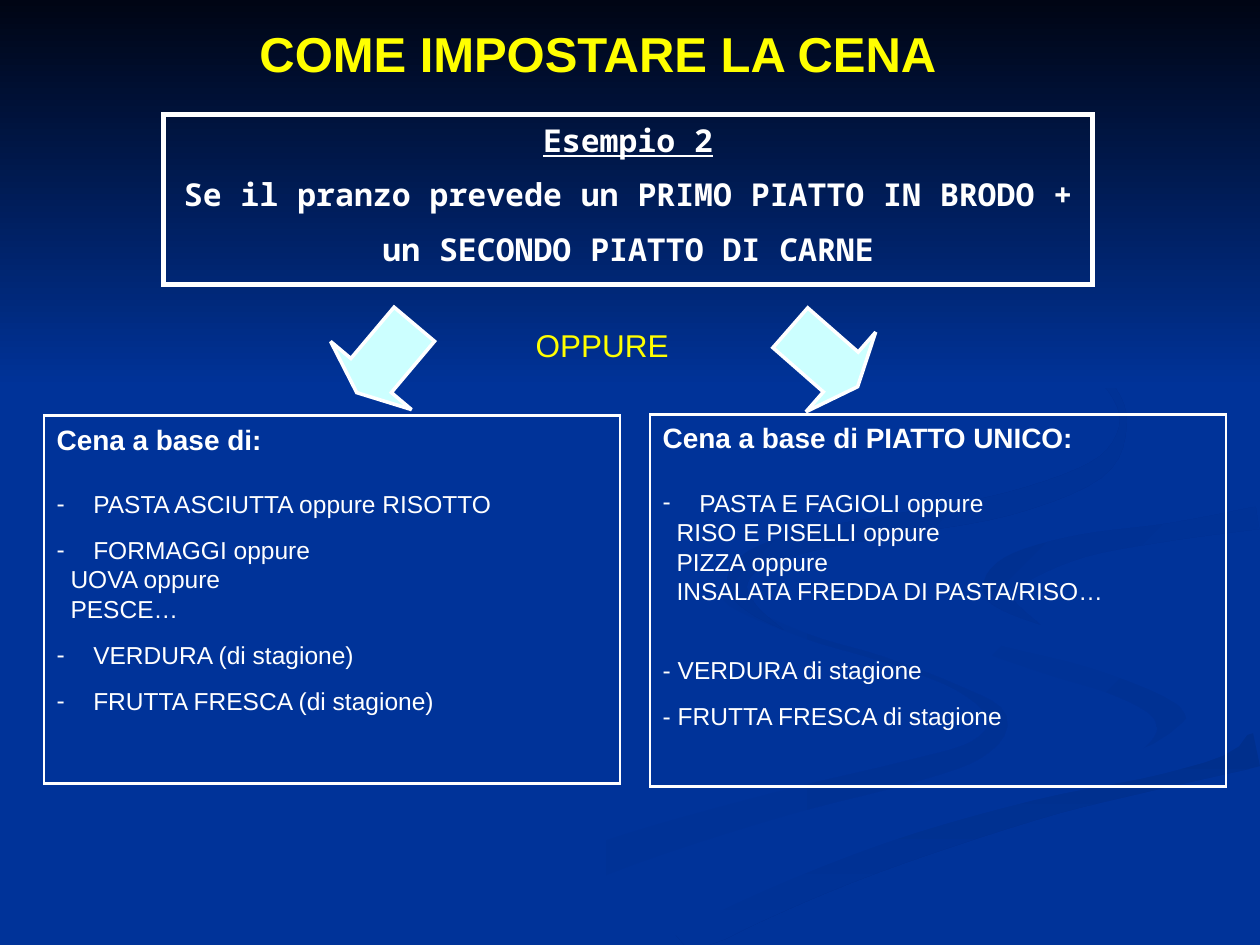
import math
from typing import NamedTuple

from lxml import etree
from pptx import Presentation
from pptx.dml.color import RGBColor
from pptx.enum import shapes, text
from pptx.oxml import ns
from pptx.util import Inches, Pt

SLIDE_WIDTH, SLIDE_HEIGHT = 10, 7.5
WHITE, YELLOW, NAVY, NIGHT, ICE = "FFFFFF", "FFFF00", "003399", "000514", "CCFFFF"
GAP = 9.5  # points between paragraphs
STEPS = 5  # points drawn for each stretch of a wave


class Ribbon(NamedTuple):
    """A band that follows knots of (x, y, thickness), in inches."""
    knots: list
    start: str
    end: str
    angle: int


LOWER_CURL = Ribbon(
    [(5.73, 4.6, 0), (5.8, 4.78, 0.06), (6.4, 5.05, 0.04), (7, 5.23, 0.04),
     (7.6, 5.46, 0.04), (7.92, 5.7, 0.14), (7.75, 5.95, 0.15), (7.2, 6.13, 0.18),
     (6.2, 6.38, 0.2), (5, 6.74, 0.25), (4, 7.13, 0.3), (3.3, 7.49, 0.35)],
    NAVY, "003193", 0)
MIDDLE_CURL = Ribbon(
    [(7.24, 4.64, 0), (7.33, 4.85, 0.03), (7.7, 5.08, 0.09), (8.3, 5.27, 0.15),
     (8.85, 5.43, 0.17), (9.2, 5.6, 0.2), (9.3, 5.78, 0.25), (9.18, 5.93, 0.13),
     (8.94, 6.05, 0)],
    NAVY, "003193", 45)
LOWER_SWEEP = Ribbon(
    [(5.37, 7.49, 0.3), (6, 7.2, 0.24), (6.95, 6.81, 0.23), (8.2, 6.41, 0.2),
     (9.03, 6.2, 0.2), (9.98, 5.95, 0.27)],
    "002F8C", NAVY, 90)
MAIN_SWEEP = Ribbon(
    [(9.99, 3.95, 0.15), (9.3, 4.07, 0.14), (8.4, 4.21, 0.15), (7.75, 4.4, 0.32),
     (7.54, 4.66, 0.52), (7.9, 4.92, 0.37), (8.7, 5.2, 0.22), (9.4, 5.45, 0.3),
     (9.7, 5.7, 0.5), (9.2, 6.02, 0.25), (8.2, 6.28, 0.14), (7, 6.62, 0.15),
     (5.8, 7.08, 0.2), (4.95, 7.49, 0.3)],
    NAVY, NAVY, 0)
UPPER_TAIL = Ribbon(
    [(9.98, 4.11, 0.18), (9.3, 4.22, 0.14), (8.6, 4.33, 0.18), (8.1, 4.5, 0.25),
     (7.92, 4.66, 0.24), (8, 4.8, 0.12), (8.26, 4.96, 0)],
    "003091", NAVY, 45)
UPPER_CURL = Ribbon(
    [(7.62, 2.33, 0), (8.05, 2.53, 0.03), (8.5, 2.8, 0.05), (8.83, 3.1, 0.06),
     (8.91, 3.4, 0.06), (8.7, 3.73, 0.15), (8, 4, 0.18), (7.08, 4.17, 0.17),
     (6.43, 4.29, 0.17), (5.98, 4.45, 0.17), (5.85, 4.64, 0.16), (5.97, 4.83, 0.08),
     (6.22, 5, 0)],
    "002F8E", NAVY, 45)
WAVES = [LOWER_CURL, MIDDLE_CURL, LOWER_SWEEP, MAIN_SWEEP, UPPER_TAIL, UPPER_CURL]

# Text, kind of line, points of space before
DINNER = [
    ("PASTA ASCIUTTA oppure RISOTTO", "bullet", 2 * GAP),
    ("FORMAGGI oppure", "bullet", GAP),
    ("UOVA oppure", "continued", 0),
    ("PESCE…", "continued", 0),
    ("VERDURA (di stagione)", "bullet", GAP),
    ("FRUTTA FRESCA (di stagione)", "bullet", GAP),
]
SINGLE_DISH = [
    ("PASTA E FAGIOLI oppure", "bullet", 2 * GAP),
    ("RISO E PISELLI oppure", "continued", 0),
    ("PIZZA oppure", "continued", 0),
    ("INSALATA FREDDA DI PASTA/RISO…", "continued", 0),
    ("- VERDURA di stagione", "plain", 3 * GAP),
    ("- FRUTTA FRESCA di stagione", "plain", GAP),
]
# Left margin and first-line indent in inches
INDENTS = {"bullet": (0.29, -0.29), "continued": (0.11, 0), "plain": (0, 0)}


def rgb(value):
    return RGBColor.from_string(value)


def inches(values):
    return [Inches(value) for value in values]


def style(paragraph, size, color=WHITE, bold=False, font="Arial", before=0):
    paragraph.font.name = font
    paragraph.font.size = Pt(size)
    paragraph.font.bold = bold
    paragraph.font.color.rgb = rgb(color)
    paragraph.space_before = Pt(before)


def outline(shape, width):
    shape.line.color.rgb = rgb(WHITE)
    shape.line.width = Pt(width)
    line = shape.element.spPr.find(ns.qn("a:ln"))
    etree.SubElement(line, ns.qn("a:miter"), lim="800000")


def set_indent(paragraph, kind):
    margin, indent = INDENTS[kind]
    properties = paragraph._p.get_or_add_pPr()
    properties.set("marL", str(Inches(margin)))
    properties.set("indent", str(Inches(indent)))
    if kind == "bullet":
        etree.SubElement(properties, ns.qn("a:buChar"), char="-")
    else:
        etree.SubElement(properties, ns.qn("a:buNone"))


def paint(shape, start, end, angle):
    """Fill a borderless shape with a gradient, or plainly if both colours agree."""
    shape.shadow.inherit = False
    shape.line.fill.background()
    if start == end:
        shape.fill.solid()
        shape.fill.fore_color.rgb = rgb(start)
        return
    shape.fill.gradient()
    shape.fill.gradient_angle = (360 - angle) % 360  # counted counter-clockwise
    for stop, color in zip(shape.fill.gradient_stops, (start, end)):
        stop.color.rgb = rgb(color)


def smooth_curve(knots):
    """Pass a Catmull-Rom curve through the knots."""
    padded = [knots[0], *knots, knots[-1]]
    curve = []
    for stretch in zip(padded, padded[1:], padded[2:], padded[3:]):
        for step in range(STEPS):
            t = step / STEPS
            curve.append([
                b + t * ((c - a) + t * ((2 * a - 5 * b + 4 * c - d)
                                        + t * (3 * b - a - 3 * c + d))) / 2
                for a, b, c, d in zip(*stretch)])
    return [*curve, knots[-1]]


def ribbon_edge(curve, side):
    """Shift the curve by half its thickness to one side, kept on the slide."""
    edge = []
    last = len(curve) - 1
    for index, (x, y, thickness) in enumerate(curve):
        before, after = curve[max(index - 1, 0)], curve[min(index + 1, last)]
        heading = math.atan2(after[1] - before[1], after[0] - before[0])
        shift = side * thickness / 2
        edge.append((Inches(min(x - shift * math.sin(heading), SLIDE_WIDTH)),
                     Inches(min(y + shift * math.cos(heading), SLIDE_HEIGHT))))
    return edge


def add_wave(slide, ribbon):
    curve = smooth_curve(ribbon.knots)
    corners = ribbon_edge(curve, 1) + ribbon_edge(curve, -1)[::-1]
    builder = slide.shapes.build_freeform(*corners[0])
    builder.add_line_segments(corners[1:], close=True)
    paint(builder.convert_to_shape(), ribbon.start, ribbon.end, ribbon.angle)


def add_background(slide):
    slide.background.fill.solid()
    slide.background.fill.fore_color.rgb = rgb(NAVY)
    for ribbon in WAVES:
        add_wave(slide, ribbon)
    sky = slide.shapes.add_shape(shapes.MSO_SHAPE.RECTANGLE, *inches((0, 0, SLIDE_WIDTH, 3.08)))
    paint(sky, NIGHT, NAVY, 90)


def place(slide, placeholder, box):
    """Move a placeholder to its box, in front of the shapes drawn so far."""
    placeholder.left, placeholder.top, placeholder.width, placeholder.height = inches(box)
    slide.shapes.element.append(placeholder.element)
    frame = placeholder.text_frame
    frame.auto_size = text.MSO_AUTO_SIZE.NONE
    frame.word_wrap = True
    return frame


def fill_title(slide, wording, box):
    frame = place(slide, slide.shapes.title, box)
    frame.vertical_anchor = text.MSO_ANCHOR.MIDDLE
    frame.text = wording
    frame.paragraphs[0].alignment = text.PP_ALIGN.CENTER
    style(frame.paragraphs[0], 28, YELLOW, bold=True)


def fill_menu(slide, index, heading, dishes, box):
    placeholder = slide.placeholders[index]
    frame = place(slide, placeholder, box)
    frame.vertical_anchor = text.MSO_ANCHOR.TOP
    outline(placeholder, 1.5)
    frame.text = heading
    style(frame.paragraphs[0], 16, bold=True)
    set_indent(frame.paragraphs[0], "plain")
    for wording, kind, before in dishes:
        paragraph = frame.add_paragraph()
        paragraph.text = wording
        style(paragraph, 14, before=before)
        set_indent(paragraph, kind)


def add_example(slide, lines, box):
    shape = slide.shapes.add_shape(shapes.MSO_SHAPE.RECTANGLE, *inches(box))
    shape.shadow.inherit = False
    shape.fill.background()
    outline(shape, 3)
    frame = shape.text_frame
    frame.vertical_anchor = text.MSO_ANCHOR.TOP
    frame.text = "\n".join(lines)
    for number, paragraph in enumerate(frame.paragraphs):
        paragraph.alignment = text.PP_ALIGN.CENTER
        style(paragraph, 18, bold=True, font="Noto Sans Mono", before=GAP if number else 0)
    frame.paragraphs[0].font.underline = True


def add_arrow(slide, left, top, rotation):
    box = inches((left, top, 0.84, 0.71))
    arrow = slide.shapes.add_shape(shapes.MSO_SHAPE.DOWN_ARROW, *box)
    arrow.adjustments[0], arrow.adjustments[1] = 0.5, 0.25
    arrow.rotation = rotation
    arrow.shadow.inherit = False
    arrow.fill.solid()
    arrow.fill.fore_color.rgb = rgb(ICE)
    outline(arrow, 2)


def add_label(slide, wording, box):
    frame = slide.shapes.add_textbox(*inches(box)).text_frame
    frame.word_wrap = False
    frame.text = wording
    frame.paragraphs[0].alignment = text.PP_ALIGN.CENTER
    style(frame.paragraphs[0], 18, YELLOW)


def main():
    presentation = Presentation()
    presentation.slide_width, presentation.slide_height = inches((SLIDE_WIDTH, SLIDE_HEIGHT))
    slide = presentation.slides.add_slide(presentation.slide_layouts.get_by_name("Two Content"))
    add_background(slide)
    fill_title(slide, "COME IMPOSTARE LA CENA", (0.75, 0.21, 7.99, 0.42))
    add_example(slide, ["Esempio 2", "Se il pranzo prevede un PRIMO PIATTO IN BRODO +",
                        "un SECONDO PIATTO DI CARNE"], (1.3, 0.91, 7.37, 1.35))
    add_arrow(slide, 2.64, 2.49, 40.1)
    fill_menu(slide, 1, "Cena a base di:", DINNER, (0.35, 3.3, 4.57, 2.92))
    fill_menu(slide, 2, "Cena a base di PIATTO UNICO:", SINGLE_DISH, (5.16, 3.29, 4.57, 2.95))
    add_label(slide, "OPPURE", (4.15, 2.54, 1.26, 0.4))
    add_arrow(slide, 6.12, 2.48, 311.2)
    presentation.save("out.pptx")


if __name__ == "__main__":
    main()
